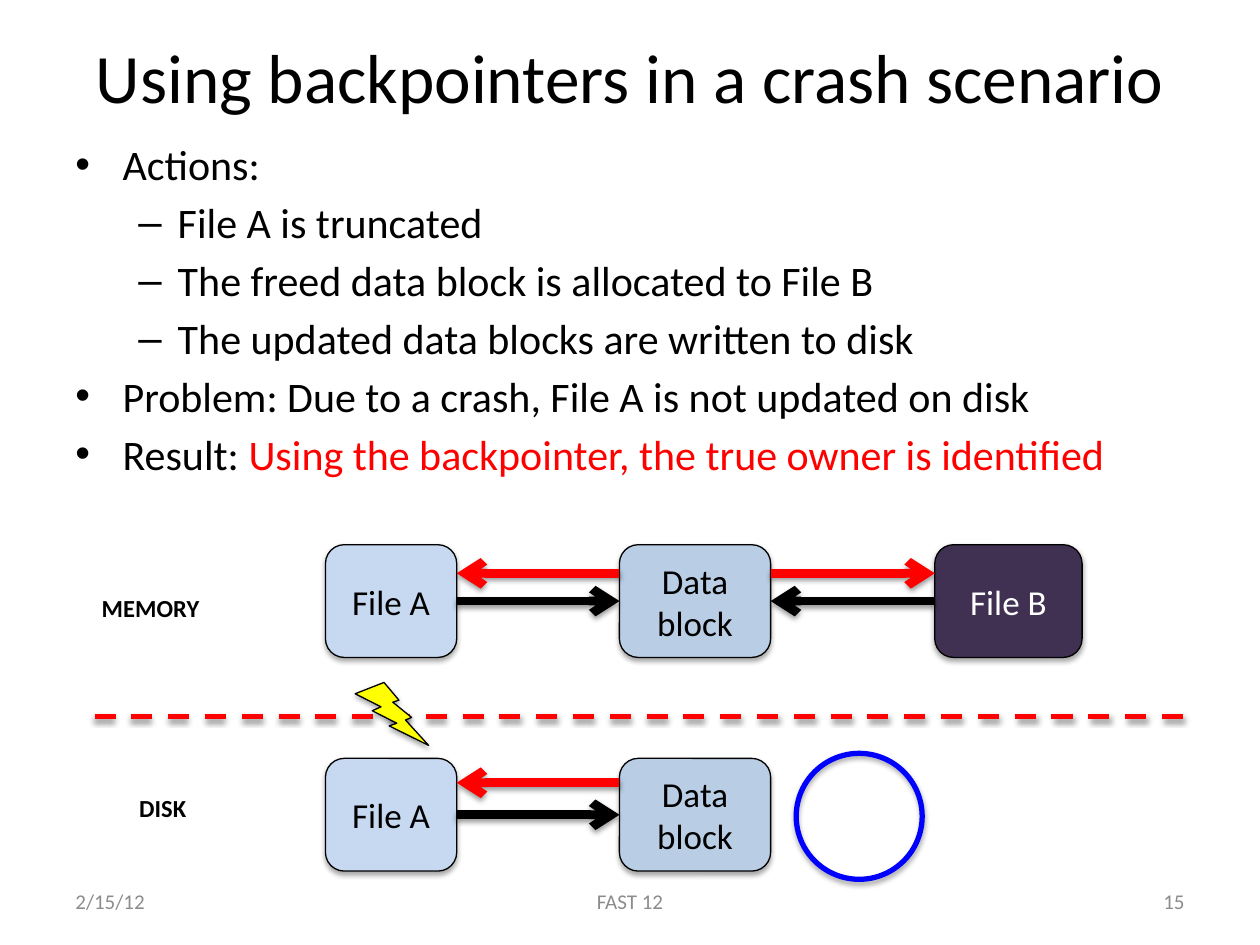
from lxml import etree
from pptx import Presentation
from pptx.dml.color import RGBColor
from pptx.enum.dml import MSO_LINE
from pptx.enum.shapes import MSO_CONNECTOR, MSO_SHAPE
from pptx.enum.text import MSO_ANCHOR, PP_ALIGN
from pptx.oxml.ns import qn
from pptx.util import Pt

FONT = "Calibri"
BLACK, WHITE, RED, BLUE, YELLOW = "000000", "FFFFFF", "FF0000", "0000FF", "FFFF00"
GREY, PALE, LIGHT, PURPLE = "8C8C8C", "C6D9F1", "B9CDE5", "403152"
LEFT, CENTER, RIGHT = PP_ALIGN.LEFT, PP_ALIGN.CENTER, PP_ALIGN.RIGHT
TOP, MIDDLE = MSO_ANCHOR.TOP, MSO_ANCHOR.MIDDLE
ROUNDED, OVAL, BOLT = MSO_SHAPE.ROUNDED_RECTANGLE, MSO_SHAPE.OVAL, MSO_SHAPE.LIGHTNING_BOLT
STRAIGHT, DASH = MSO_CONNECTOR.STRAIGHT, MSO_LINE.DASH
SIDE_LEFT, SIDE_RIGHT = 1, 3

MARGIN, CONTENT_W = 36, 648
MEMORY_Y, DISK_Y, BLOCK_H = 311.3, 433.4, 64.4
FILE_A_X, FILE_A_W = 186, 75
DATA_X, DATA_W = 354, 86.4
FILE_B_X, FILE_B_W = 534.2, 84.2

BULLETS = [
    (0, [("Actions:", BLACK)]),
    (1, [("File A is truncated", BLACK)]),
    (1, [("The freed data block is allocated to File B", BLACK)]),
    (1, [("The updated data blocks are written to disk", BLACK)]),
    (0, [("Problem: Due to a crash, File A is not updated on disk", BLACK)]),
    (0, [("Result: ", BLACK),
         ("Using the backpointer, the true owner is identified", RED)]),
]
BULLET_STYLES = [("•", 27, -27), ("–", 58.5, -22.5)]


def rgb(color):
    return RGBColor.from_string(color)


def style_run(r, size, color, bold=False):
    r.font.name = FONT
    r.font.size = Pt(size)
    r.font.bold = bold
    r.font.color.rgb = rgb(color)


def add_shadow(sp, opacity, distance):
    effects = etree.SubElement(sp._element.spPr, qn("a:effectLst"))
    shadow = etree.SubElement(
        effects, qn("a:outerShdw"), blurRad=str(Pt(3.1)), dist=str(Pt(distance)),
        dir="5400000", rotWithShape="0")
    color = etree.SubElement(shadow, qn("a:srgbClr"), val=BLACK)
    etree.SubElement(color, qn("a:alpha"), val=str(opacity * 1000))


def write(sp, text, size, color, align, anchor, bold=False):
    tf = sp.text_frame
    tf.word_wrap = True
    tf.vertical_anchor = anchor
    tf.text = text
    p = tf.paragraphs[0]
    p.alignment = align
    style_run(p.runs[0], size, color, bold)


def add_text(s, box, text, size, color=BLACK, align=LEFT, anchor=MIDDLE, bold=False):
    sp = s.shapes.add_textbox(*map(Pt, box))
    write(sp, text, size, color, align, anchor, bold)


def add_figure(s, kind, box, fill=None, line=BLACK, width=0.75):
    sp = s.shapes.add_shape(kind, *map(Pt, box))
    if fill:
        sp.fill.solid()
        sp.fill.fore_color.rgb = rgb(fill)
    else:
        sp.fill.background()
    sp.line.color.rgb = rgb(line)
    sp.line.width = Pt(width)
    add_shadow(sp, 35, 1.8)
    return sp


def add_block(s, x, y, w, text, fill, color=BLACK):
    sp = add_figure(s, ROUNDED, (x, y, w, BLOCK_H), fill)
    write(sp, text, 20, color, CENTER, MIDDLE)
    return sp


def add_line(s, x1, x2, y, color, width):
    sp = s.shapes.add_connector(STRAIGHT, Pt(x1), Pt(y), Pt(x2), Pt(y))
    sp.line.color.rgb = rgb(color)
    sp.line.width = Pt(width)
    add_shadow(sp, 38, 1.6)
    return sp


def add_arrow(s, x1, x2, y, color):
    sp = add_line(s, x1, x2, y, color, 5)
    etree.SubElement(sp._element.spPr.find(qn("a:ln")), qn("a:tailEnd"), type="arrow")
    return sp


def add_pointer(s, start, start_side, end, end_side):
    sp = add_arrow(s, 0, 0, 0, BLACK)
    sp.begin_connect(start, start_side)
    sp.end_connect(end, end_side)


def add_bullets(s, box):
    tf = s.shapes.add_textbox(*map(Pt, box)).text_frame
    tf.word_wrap = True
    for i, (level, parts) in enumerate(BULLETS):
        p = tf.add_paragraph() if i else tf.paragraphs[0]
        p.level = level
        p.space_before = Pt(4.3)
        char, margin, indent = BULLET_STYLES[level]
        pPr = p._p.get_or_add_pPr()
        pPr.set("marL", str(Pt(margin)))
        pPr.set("indent", str(Pt(indent)))
        etree.SubElement(pPr, qn("a:buFont"), typeface="Arial")
        etree.SubElement(pPr, qn("a:buChar"), char=char)
        for text, color in parts:
            r = p.add_run()
            r.text = text
            style_run(r, 24, color)


def add_file_and_data(s, y):
    file_a = add_block(s, FILE_A_X, y, FILE_A_W, "File A", PALE)
    data = add_block(s, DATA_X, y, DATA_W, "Data block", LIGHT)
    add_pointer(s, file_a, SIDE_RIGHT, data, SIDE_LEFT)
    return data


def main():
    prs = Presentation()
    prs.slide_width, prs.slide_height = Pt(720), Pt(540)
    s = prs.slides.add_slide(prs.slide_layouts[6])

    add_text(s, (MARGIN, -1.5, CONTENT_W, 90),
             "Using backpointers in a crash scenario", 39.6, align=CENTER)
    add_bullets(s, (MARGIN, 75.6, CONTENT_W, 356.4))
    for x, w, text, align in [(36, 168, "2/15/12", LEFT), (246, 228, "FAST 12", CENTER),
                              (516, 168, "15", RIGHT)]:
        add_text(s, (x, 500.5, w, 28.75), text, 12, GREY, align)
    for y, text, align in [(335.5, "MEMORY", LEFT), (449.5, "DISK", CENTER)]:
        add_text(s, (51, y, 84, 24.25), text, 14, align=align, anchor=TOP, bold=True)

    data = add_file_and_data(s, MEMORY_Y)
    file_b = add_block(s, FILE_B_X, MEMORY_Y, FILE_B_W, "File B", PURPLE, WHITE)
    add_pointer(s, file_b, SIDE_LEFT, data, SIDE_RIGHT)
    add_file_and_data(s, DISK_Y)
    for y in (327.6, 447.3):
        add_arrow(s, DATA_X, FILE_A_X + FILE_A_W, y, RED)
    add_arrow(s, DATA_X + DATA_W, FILE_B_X, 327.6, RED)

    add_line(s, 54, 684, 409.5, RED, 3).line.dash_style = DASH
    add_figure(s, BOLT, (203, 390, 42, 36), YELLOW)
    add_figure(s, OVAL, (455, 430.5, 72, 72), line=BLUE, width=3)

    prs.save("out.pptx")


if __name__ == "__main__":
    main()
